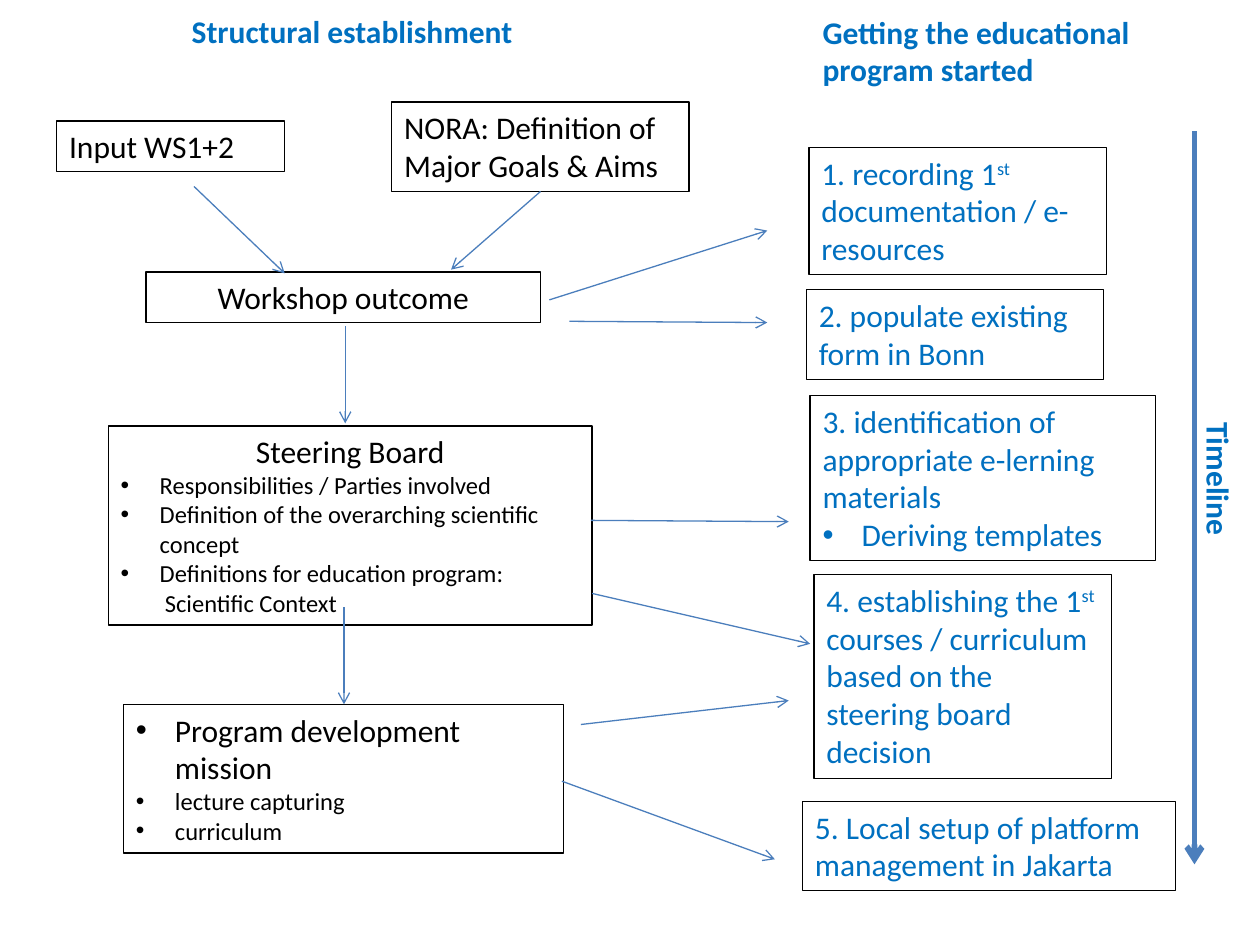
from lxml.etree import SubElement
from pptx import Presentation
from pptx.dml.color import RGBColor
from pptx.enum.shapes import MSO_CONNECTOR as Connector
from pptx.enum.text import MSO_AUTO_SIZE as AutoSize, PP_ALIGN as Align
from pptx.oxml.ns import qn
from pptx.util import Inches, Pt

COLORS = {"ink": "000000", "accent": "0070C0", "arrow": "4B7EBC"}
FONT = "Calibri"
INDENT = 0.31


def color(name):
    """Return the palette colour with the given name."""
    return RGBColor.from_string(COLORS[name])


def line(text, size=18, align=Align.LEFT, bullet=False, indent=0):
    """Describe one paragraph; carets enclose superscript text."""
    return dict(text=text, size=size, align=align, bullet=bullet, indent=indent)


def centered(text):
    """Describe one centred paragraph."""
    return line(text, align=Align.CENTER)


def bulleted(text, size=14):
    """Describe one bulleted paragraph."""
    return line(text, size, bullet=True, indent=INDENT)


def write_paragraph(paragraph, entry, ink, bold):
    """Fill a paragraph from its description."""
    for position, part in enumerate(entry["text"].split("^")):
        run = paragraph.add_run()
        run.text = part
        if position % 2:
            run._r.get_or_add_rPr().set("baseline", "30000")
    paragraph.alignment = entry["align"]
    font = paragraph.font
    font.name, font.size, font.bold = FONT, Pt(entry["size"]), bold
    font.color.rgb = color(ink)
    properties = paragraph._p.get_or_add_pPr()
    if entry["indent"]:
        properties.set("marL", str(Inches(entry["indent"])))
    if entry["bullet"]:
        properties.set("indent", str(-Inches(INDENT)))
        marker = properties.makeelement(qn("a:buChar"), {"char": "•"})
        properties.insert(0, marker)
        typeface = properties.makeelement(qn("a:buFont"), {"typeface": "Arial"})
        properties.insert(0, typeface)


def add_label(slide, box, entries, ink="ink", bold=False, framed=True):
    """Place a text block, framed or plain, in the given box."""
    label = slide.shapes.add_textbox(*map(Inches, box))
    frame = label.text_frame
    frame.word_wrap = True
    frame.auto_size = AutoSize.SHAPE_TO_FIT_TEXT
    for position, entry in enumerate(entries):
        paragraph = frame.add_paragraph() if position else frame.paragraphs[0]
        write_paragraph(paragraph, entry, ink, bold)
    if framed:
        label.line.color.rgb = color("ink")
        label.line.width = Pt(0.75)
    return label


def add_heading(slide, box, entry):
    """Place a bold, unframed heading in the given box."""
    return add_label(slide, box, [entry], "accent", bold=True, framed=False)


def add_arrow(slide, start, end, width=0.75):
    """Draw an open-headed arrow from start to end."""
    points = map(Inches, (*start, *end))
    arrow = slide.shapes.add_connector(Connector.STRAIGHT, *points)
    arrow.line.color.rgb = color("arrow")
    arrow.line.width = Pt(width)
    SubElement(arrow.line._get_or_add_ln(), qn("a:tailEnd"), type="arrow")
    SubElement(arrow._element.spPr, qn("a:effectLst"))


def add_structure(slide, left, top):
    """Place the structural steps and the arrows between them."""
    add_heading(slide, (left + 0.85, top, 2.99, 0.4),
                centered("Structural establishment"))
    steps = [
        ((0, 0.91, 1.81, 0.4), [line("Input WS1+2")]),
        ((2.66, 0.76, 2.36, 0.71),
         [line("NORA: Definition of Major Goals & Aims")]),
        ((0.71, 2.11, 3.13, 0.4), [centered("Workshop outcome")]),
        ((0.41, 3.33, 3.84, 1.58), [
            centered("Steering Board"),
            bulleted("Responsibilities / Parties involved"),
            bulleted("Definition of the overarching scientific concept"),
            bulleted("Definitions for education program:"),
            line("Scientific Context", 14, indent=0.35),
        ]),
        ((0.53, 5.54, 3.49, 1.18), [
            bulleted("Program development mission", 18),
            bulleted("lecture capturing"),
            bulleted("curriculum"),
        ]),
    ]
    for (x, y, width, height), entries in steps:
        add_label(slide, (left + x, top + y, width, height), entries)
    flows = [
        ((1.09, 1.43), (1.81, 2.12)),
        ((3.84, 1.47), (3.13, 2.09)),
        ((2.29, 2.54), (2.29, 3.31)),
        ((2.28, 4.77), (2.28, 5.54)),
    ]
    for (x1, y1), (x2, y2) in flows:
        add_arrow(slide, (left + x1, top + y1), (left + x2, top + y2))


def add_program(slide, left, top):
    """Place the five steps that start the educational program."""
    add_heading(slide, (left + 0.06, top, 2.99, 0.71),
                line("Getting the educational program started"))
    steps = [
        ((0.05, 1.12, 2.36, 1.01),
         [line("1. recording 1^st^ documentation / e-resources")]),
        ((0.03, 2.25, 2.36, 0.71),
         [line("2. populate existing form in Bonn")]),
        ((0.06, 3.09, 2.74, 1.31), [
            line("3. identification of appropriate e-lerning materials"),
            bulleted("Deriving templates", 18),
        ]),
        ((0.09, 4.51, 2.36, 1.62),
         [line("4. establishing the 1^st ^courses / curriculum based on "
               "the steering board decision")]),
        ((0, 6.31, 2.96, 0.71),
         [line("5. Local setup of platform management in Jakarta")]),
    ]
    for (x, y, width, height), entries in steps:
        add_label(slide, (left + x, top + y, width, height), entries, "accent")


def add_links(slide, left, top):
    """Draw the arrows from the structure to the program steps."""
    links = [
        ((0, 0.55), (1.73, 0)),
        ((0.16, 0.72), (1.73, 0.73)),
        ((0.33, 2.3), (1.9, 2.31)),
        ((0.34, 2.88), (2.07, 3.28)),
        ((0.25, 3.92), (1.9, 3.73)),
        ((0.1, 4.37), (1.79, 4.99)),
    ]
    for (x1, y1), (x2, y2) in links:
        add_arrow(slide, (left + x1, top + y1), (left + x2, top + y2))


def add_timeline(slide, left, top, height):
    """Draw the heavy timeline arrow with its turned caption."""
    add_arrow(slide, (left, top), (left, top + height), 3.25)
    caption = add_heading(slide, (left - 1.3, top + 2.56, 2.99, 0.4),
                          centered("Timeline"))
    caption.rotation = 90


def main():
    """Build and save the slide."""
    deck = Presentation()
    deck.slide_width, deck.slide_height = Inches(10), Inches(7.5)
    slide = deck.slides.add_slide(deck.slide_layouts[6])
    add_structure(slide, 0.45, 0.05)
    add_program(slide, 6.37, 0.05)
    add_links(slide, 4.36, 1.83)
    add_timeline(slide, 9.48, 1.04, 5.82)
    deck.save("out.pptx")


if __name__ == "__main__":
    main()
